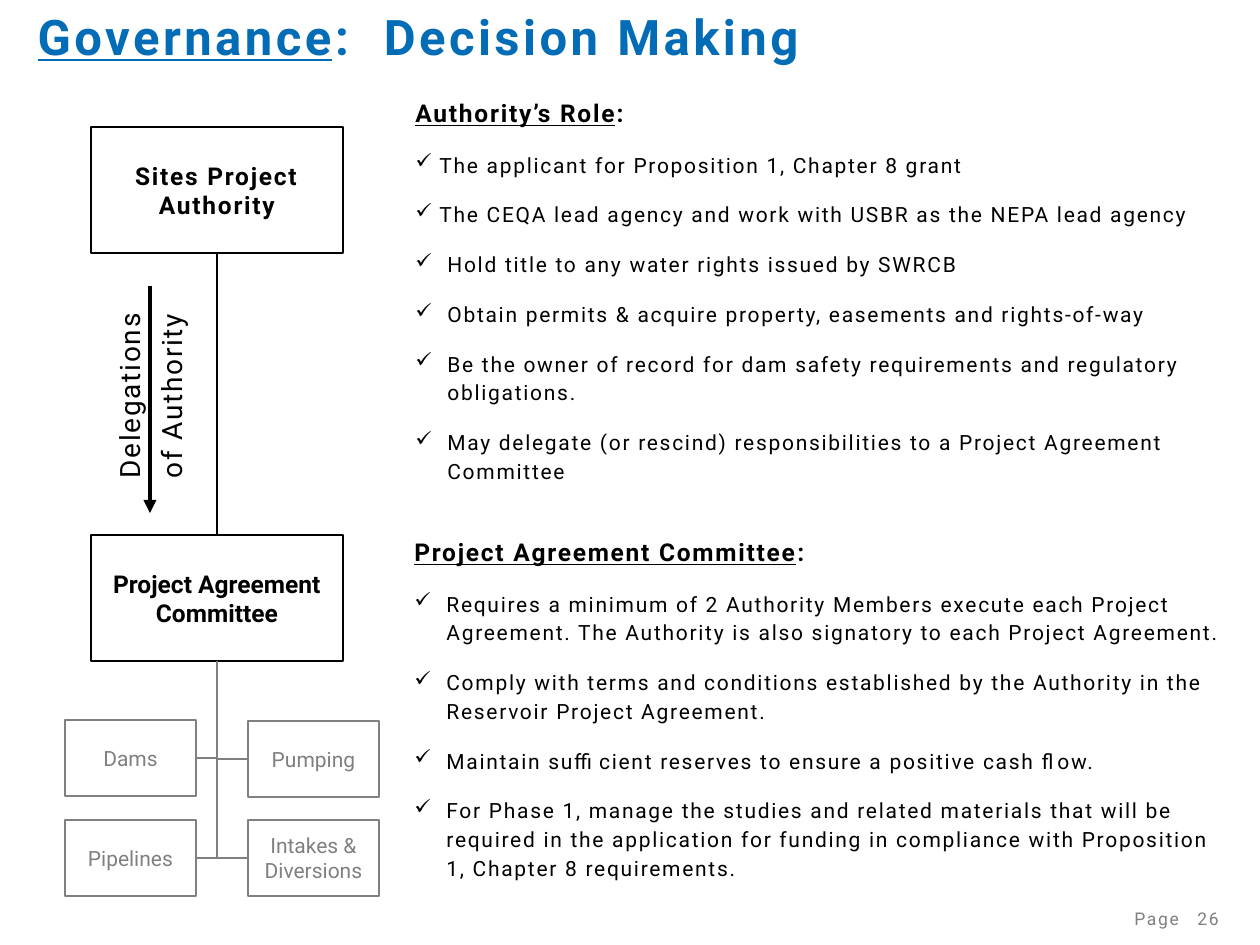
from lxml import etree
from pptx import Presentation
from pptx import util as u
from pptx.dml.color import RGBColor
from pptx.enum import shapes, text
from pptx.oxml.ns import qn

PX = u.Inches(1) / 126
FONT = "Roboto"
BLUE = RGBColor(0x02, 0x6C, 0xB6)
BLACK = RGBColor(0, 0, 0)
GRAY = RGBColor(0x80, 0x80, 0x80)
WHITE = RGBColor(0xFF, 0xFF, 0xFF)

AUTHORITY_ROLE = [
    (24, "The applicant for Proposition 1, Chapter 8 grant"),
    (24, "The CEQA lead agency and work with USBR as the NEPA lead agency"),
    (32, "Hold title to any water rights issued by SWRCB"),
    (32, "Obtain permits & acquire property, easements and rights-of-way"),
    (32, "Be the owner of record for dam safety requirements and regulatory obligations."),
    (32, "May delegate (or rescind) responsibilities to a Project Agreement Committee"),
]
COMMITTEE_ROLE = [
    (32, "Requires a minimum of 2 Authority Members execute each Project Agreement. "
         "The Authority is also signatory to each Project Agreement."),
    (32, "Comply with terms and conditions established by the Authority in the "
         "Reservoir Project Agreement."),
    (32, "Maintain sufficient reserves to ensure a positive cash flow."),
    (32, "For Phase 1, manage the studies and related materials that will be required in "
         "the application for funding in compliance with Proposition 1, Chapter 8 requirements."),
]


def px(n):
    return u.Emu(round(n * PX))


def add_run(paragraph, words, size, color=BLACK, bold=False, underline=False, spacing=0):
    run = paragraph.add_run()
    run.text = words
    font = run.font
    font.name, font.size, font.bold, font.underline = FONT, u.Pt(size), bold, underline
    font.color.rgb = color
    if spacing:
        font._element.set("spc", str(spacing * 100))


def add_text_box(slide, x, y, w, h, grow=False):
    box = slide.shapes.add_textbox(px(x), px(y), px(w), px(h))
    box.text_frame.word_wrap = True
    if grow:
        box.text_frame.auto_size = text.MSO_AUTO_SIZE.SHAPE_TO_FIT_TEXT
    return box


def set_title(slide):
    title = slide.shapes.title
    title.left, title.top, title.width, title.height = px(25), px(0), px(1235), px(91)
    frame = title.text_frame
    frame.vertical_anchor = text.MSO_ANCHOR.TOP
    frame.auto_size = text.MSO_AUTO_SIZE.NONE
    heading = frame.paragraphs[0]
    heading.alignment = text.PP_ALIGN.LEFT
    add_run(heading, "Governance", 28, BLUE, True, True, 2)
    add_run(heading, ":  Decision Making", 28, BLUE, True, False, 2)


def add_org_box(slide, words, x, y, w, h, size, color, bold=False, spacing=0):
    box = slide.shapes.add_shape(shapes.MSO_SHAPE.RECTANGLE, px(x), px(y), px(w), px(h))
    box.shadow.inherit = False
    box.fill.solid()
    box.fill.fore_color.rgb = WHITE
    box.line.color.rgb = color
    box.line.width = u.Pt(1)
    box.text_frame.word_wrap = True
    box.text_frame.vertical_anchor = text.MSO_ANCHOR.MIDDLE
    label = box.text_frame.paragraphs[0]
    label.alignment = text.PP_ALIGN.CENTER
    add_run(label, words, size, color, bold, spacing=spacing)
    return box


def add_line(slide, kind, color, width, ends=(0, 0, 0, 0)):
    line = slide.shapes.add_connector(kind, *map(px, ends))
    line.line.color.rgb = color
    line.line.width = u.Pt(width)
    etree.SubElement(line._element.spPr, qn("a:effectLst"))
    return line


def add_branch(slide, parent, leaf):
    """One-bend connector: down from the parent, then sideways to the leaf."""
    to_left = leaf.left < parent.left + parent.width // 2 - leaf.width
    branch = add_line(slide, shapes.MSO_CONNECTOR.ELBOW, GRAY, 1)
    branch.begin_connect(parent, 2)
    branch.end_connect(leaf, 3 if to_left else 1)
    x1, y1, x2, y2 = branch.begin_x, branch.begin_y, branch.end_x, branch.end_y
    drop, reach = y2 - y1, abs(x2 - x1)
    # The preset bends after a horizontal run, so it is turned a quarter
    branch.left, branch.top = (x1 + x2 - drop) // 2, (y1 + y2 - reach) // 2
    branch.width, branch.height = drop, reach
    frame = branch._element.spPr.find(qn("a:xfrm"))
    frame.set("rot", "5400000" if to_left else "16200000")
    frame.set("flipH", "0" if to_left else "1")
    branch._element.spPr.find(qn("a:prstGeom")).set("prst", "bentConnector2")


def add_role_list(slide, x, y, w, h, heading, duties):
    frame = add_text_box(slide, x, y, w, h, grow=True).text_frame
    first = frame.paragraphs[0]
    add_run(first, heading, 14, bold=True, underline=True, spacing=1)
    add_run(first, ":", 14, bold=True, spacing=1)
    for _, duty in duties:
        add_run(frame.add_paragraph(), duty, 12, spacing=1)
    for paragraph in frame.paragraphs:
        paragraph.line_spacing = 1.14
        paragraph.space_before = paragraph.space_after = u.Pt(6)
    for paragraph, (indent, _) in zip(frame.paragraphs[1:], duties):
        props = paragraph._p.get_or_add_pPr()
        props.set("marL", str(px(indent)))
        props.set("indent", str(-px(indent)))
        etree.SubElement(props, qn("a:buChar"), char="✓")


def add_delegation(slide):
    caption = add_text_box(slide, 44, 340, 204, 97, grow=True)
    caption.rotation = 270
    words = caption.text_frame.paragraphs[0]
    words.line_spacing = 1.25
    add_run(words, "Delegations of Authority", 16, spacing=1)
    arrow = add_line(slide, shapes.MSO_CONNECTOR.STRAIGHT, BLACK, 2.5, (150, 286, 150, 513))
    etree.SubElement(arrow.line._get_or_add_ln(), qn("a:tailEnd"), type="triangle")


def add_page_number(slide):
    frame = add_text_box(slide, 1074, 892, 209, 53).text_frame
    frame.vertical_anchor = text.MSO_ANCHOR.MIDDLE
    page = frame.paragraphs[0]
    add_run(page, "Page\t26", 10, GRAY, spacing=1)
    props = page._p.get_or_add_pPr()
    props.set("marL", str(px(48)))
    props.set("indent", "0")
    stops = etree.SubElement(props, qn("a:tabLst"))
    etree.SubElement(stops, qn("a:tab"), pos=str(px(141)), algn="r")


def main():
    deck = Presentation()
    deck.slide_width, deck.slide_height = u.Inches(10), u.Inches(7.5)
    slide = deck.slides.add_slide(deck.slide_layouts[5])
    add_page_number(slide)
    set_title(slide)

    # Organisation chart
    authority = add_org_box(slide, "Sites Project Authority", 91, 127, 252, 126, 14, BLACK, True, 1)
    committee = add_org_box(slide, "Project Agreement Committee", 91, 535, 252, 126, 14, BLACK, True)
    trunk = add_line(slide, shapes.MSO_CONNECTOR.STRAIGHT, BLACK, 1)
    trunk.begin_connect(authority, 2)
    trunk.end_connect(committee, 0)
    for words, x, y in (("Dams", 65, 720), ("Pipelines", 65, 820),
                        ("Intakes & Diversions", 248, 820), ("Pumping", 248, 721)):
        leaf = add_org_box(slide, words, x, y, 131, 76, 12, GRAY)
        add_branch(slide, committee, leaf)

    # Roles
    add_role_list(slide, 403, 88, 837, 406, "Authority’s Role", AUTHORITY_ROLE)
    add_role_list(slide, 402, 527, 837, 363, "Project Agreement Committee", COMMITTEE_ROLE)

    add_delegation(slide)
    deck.save("out.pptx")


if __name__ == "__main__":
    main()
